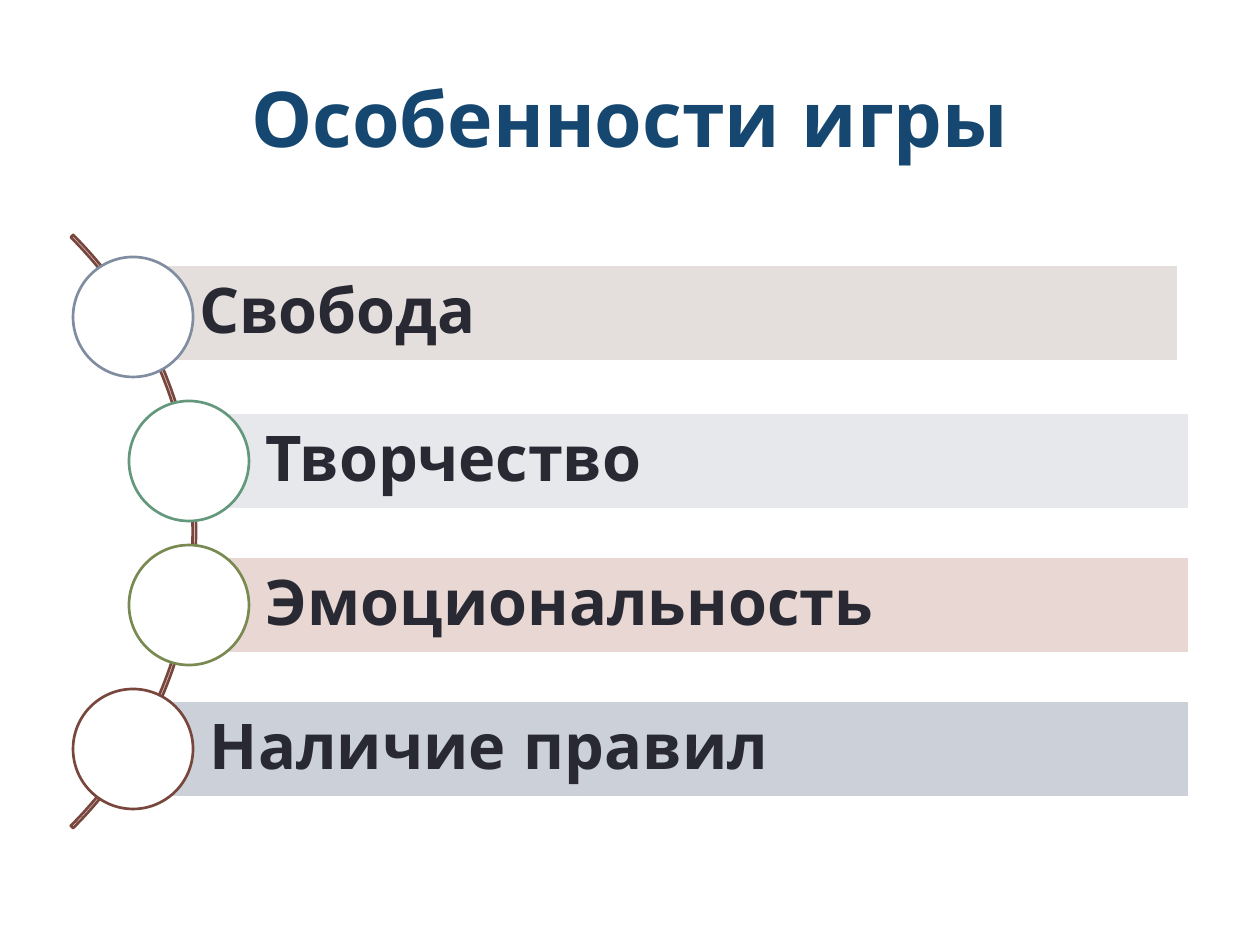
from dataclasses import dataclass
from pptx import Presentation
from pptx import util as u
from pptx.dml.color import RGBColor
from pptx.enum import shapes, text

KIND = shapes.MSO_SHAPE
ALIGN = text.PP_ALIGN


@dataclass(frozen=True)
class Theme:
    font: str = "Quicksand"
    white: str = "FFFFFF"
    title: str = "164770"
    ink: str = "292934"
    arc: str = "79463D"
    head: int = 44
    body: int = 36
    line: float = 1.54


THEME = Theme()
ROWS = [
    ("Свобода", 73, "E4DFDC", "808DA0", (-11, -4)),
    ("Творчество", 129, "E6E8EC", "64987C", (0, 0)),
    ("Эмоциональность", 129, "E9D7D3", "788A50", (0, 0)),
    ("Наличие правил", 73, "CCD1D9", "79463D", (0, 0)),
]
TOP, STEP, DISC = 257, 144, 120
RIGHT, BAR, INSET = 1189, 96, 76


def px(n):
    return u.Emu(round(n * 914400 / 126))


def box(*sides):
    return [px(n) for n in sides]


def write(shape, words, size, color, align, left=0, space=1.0):
    frame = shape.text_frame
    layout = {
        "word_wrap": True,
        "vertical_anchor": text.MSO_ANCHOR.MIDDLE,
        "margin_left": px(left),
        "margin_right": 0,
        "margin_top": 0,
        "margin_bottom": 0,
    }
    for key, value in layout.items():
        setattr(frame, key, value)
    para = frame.paragraphs[0]
    para.alignment = align
    para.line_spacing = space
    run = para.add_run()
    run.text = words
    style = {"name": THEME.font, "size": u.Pt(size), "bold": True}
    for key, value in style.items():
        setattr(run.font, key, value)
    run.font.color.rgb = RGBColor.from_string(color)


def draw(slide, kind, sides, line, fill=None):
    shape = slide.shapes.add_shape(kind, *box(*sides))
    shape.shadow.inherit = False
    if fill:
        shape.fill.solid()
        shape.fill.fore_color.rgb = RGBColor.from_string(fill)
    else:
        shape.fill.background()
    shape.line.color.rgb = RGBColor.from_string(line)
    shape.line.width = u.Pt(THEME.line)
    return shape


def add_title(slide, words):
    shape = slide.shapes.add_textbox(*box(63, 38, 1134, 158))
    write(shape, words, THEME.head, THEME.title, ALIGN.CENTER)


def add_arc(slide):
    arc = draw(slide, KIND.BLOCK_ARC, (-643, 112, 839, 839), THEME.arc)
    for i, value in enumerate((189, 27, 0.004)):
        arc.adjustments[i] = value


def add_row(slide, i, words, left, fill, ring, shift):
    top = TOP + STEP * i
    dx, dy = shift
    start = left + DISC // 2 + 1
    sides = (start + dx, top + 12 + dy, RIGHT - start, BAR)
    bar = draw(slide, KIND.RECTANGLE, sides, THEME.white, fill)
    write(bar, words, THEME.body, THEME.ink, ALIGN.LEFT, INSET, 0.9)
    draw(slide, KIND.OVAL, (left, top, DISC, DISC), ring, THEME.white)


def main():
    deck = Presentation()
    deck.slide_width, deck.slide_height = box(1260, 945)
    slide = deck.slides.add_slide(deck.slide_layouts[6])
    add_title(slide, "Особенности игры")
    add_arc(slide)
    for i, row in enumerate(ROWS):
        add_row(slide, i, *row)
    deck.save("out.pptx")


if __name__ == "__main__":
    main()
